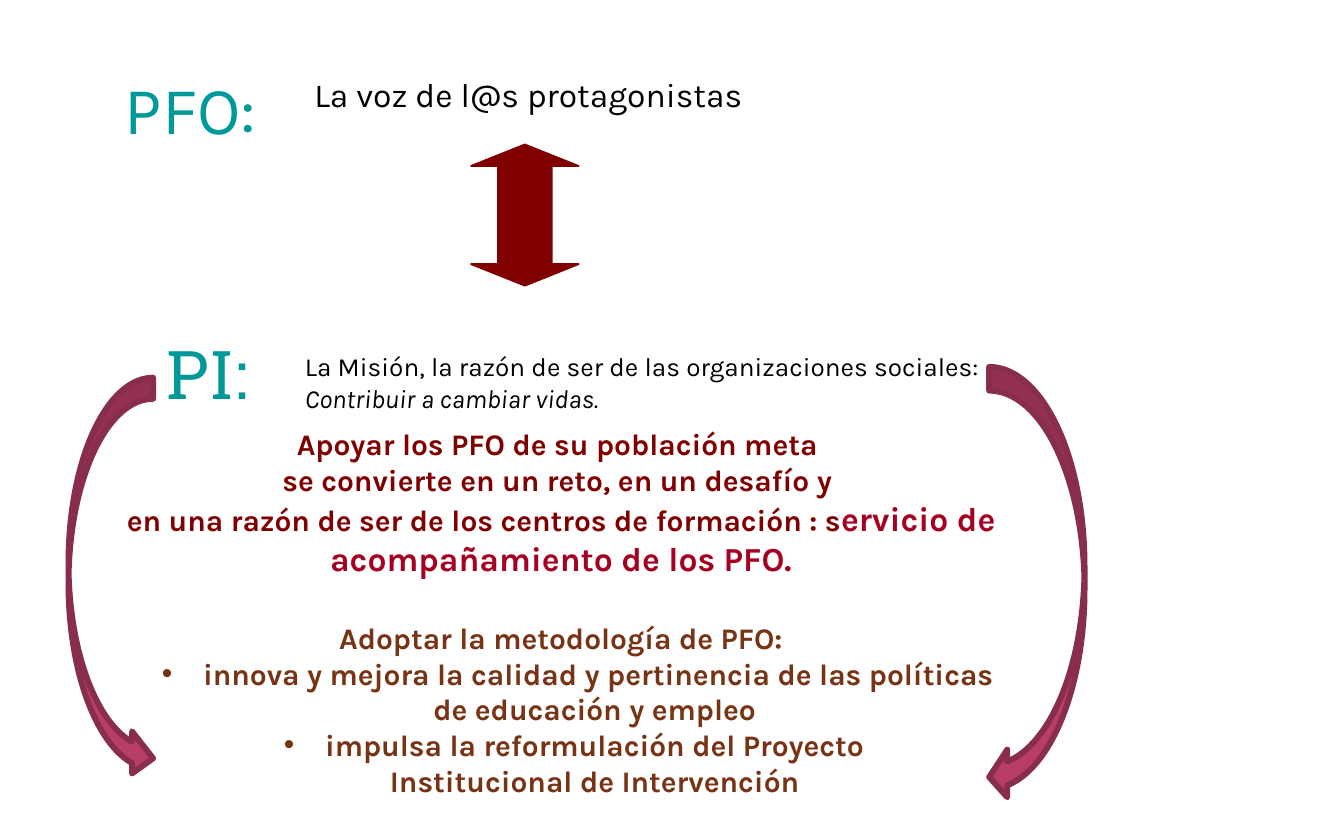
from lxml import etree
from pptx import Presentation
from pptx.dml.color import RGBColor
from pptx.enum.shapes import MSO_SHAPE as Shape
from pptx.enum.text import MSO_ANCHOR as Anchor, MSO_AUTO_SIZE as AutoSize, PP_ALIGN as Align
from pptx.oxml.ns import qn
from pptx.util import Inches, Pt

COLORS = {
    "teal": "009999", "black": "000000", "maroon": "800000", "red": "A50021",
    "brown": "773313", "plum": "B83D68", "plum_dark": "882D4D",
}


def rgb(name):
    return RGBColor.from_string(COLORS[name])


def place(sp, box):
    sp.left, sp.top, sp.width, sp.height = map(Inches, box)


def style(font, size, color, name="Karla", bold=False, italic=False):
    font.name, font.size = name, Pt(size)
    font.bold, font.italic = bold, italic
    font.color.rgb = rgb(color)


def prepare(tf):
    tf.word_wrap = True
    tf.auto_size = AutoSize.NONE
    tf.vertical_anchor = Anchor.TOP


def add_text(s, box, lines, size, color, name="Karla"):
    sp = s.shapes.add_textbox(*map(Inches, box))
    prepare(sp.text_frame)
    sp.text_frame.text = "\n".join(text for text, _ in lines)
    for p, (_, italic) in zip(sp.text_frame.paragraphs, lines):
        style(p.font, size, color, name, italic=italic)


def fill_title(sp, box, text):
    place(sp, box)
    prepare(sp.text_frame)
    sp.text_frame.text = text
    p = sp.text_frame.paragraphs[0]
    p.alignment = Align.LEFT
    style(p.font, 36, "teal")


def set_indent(p, left=0, bullet=False):
    pPr = p._p.get_or_add_pPr()
    pPr.set("marL", str(Inches(left)))
    pPr.set("indent", str(Inches(-0.25 if bullet else 0)))
    mark = etree.Element(qn("a:buChar" if bullet else "a:buNone"))
    if bullet:
        mark.set("char", "•")
    pPr.insert_element_before(mark, "a:tabLst", "a:defRPr", "a:extLst")


def add_line(tf, runs, left=0, bullet=False, before=0):
    p = tf.paragraphs[0] if not tf.paragraphs[0].runs else tf.add_paragraph()
    p.alignment = Align.CENTER
    p.space_before = Pt(before)
    set_indent(p, left, bullet)
    for text, size, color in runs:
        r = p.add_run()
        r.text = text
        if len(runs) > 1:
            style(r.font, size, color, bold=True)
    if len(runs) == 1:
        style(p.font, size, color, bold=True)


def fill_body(sp, box):
    place(sp, box)
    tf = sp.text_frame
    prepare(tf)
    add_line(tf, [("Apoyar los PFO de su población meta ", 16, "maroon")])
    add_line(tf, [("se convierte en un reto, en un desafío y ", 16, "maroon")])
    add_line(tf, [
        ("en una razón de ser de los centros de formación : s", 16, "maroon"),
        ("ervicio de acompañamiento de los PFO.", 18, "red"),
    ])
    add_line(tf, [("Adoptar la metodología de PFO:", 16, "brown")], before=22)
    for text, bullet in (
        (" innova y mejora la calidad y pertinencia de las políticas de educación y empleo", True),
        (" impulsa la reformulación del Proyecto ", True),
        ("Institucional de Intervención", False),
    ):
        add_line(tf, [(text, 16, "brown")], left=0.5, bullet=bullet)


def add_arrow(s, kind, box, fill, line, width, adjustments=(), rotation=0):
    sp = s.shapes.add_shape(kind, *map(Inches, box))
    sp.shadow.inherit = False
    sp.rotation = rotation
    for i, value in enumerate(adjustments):
        sp.adjustments[i] = value
    sp.fill.solid()
    sp.fill.fore_color.rgb = rgb(fill)
    sp.line.color.rgb = rgb(line)
    sp.line.width = Pt(width)


def main():
    prs = Presentation()
    prs.slide_width, prs.slide_height = Inches(10), Inches(6.25)
    s = prs.slides.add_slide(prs.slide_layouts[1])
    fill_title(s.shapes.title, (0.83, 0.45, 1.45, 0.71), "PFO:")
    fill_body(s.placeholders[1], (0.83, 3.12, 6.69, 3.16))
    add_text(s, (1.14, 2.42, 0.85, 0.71), [("PI:", False)], 36, "teal", "Roboto Slab")
    add_text(s, (2.24, 0.5, 3.94, 0.4), [("La voz de l@s protagonistas", False)], 18, "black")
    add_text(s, (2.17, 2.56, 5.57, 0.57), [
        ("La Misión, la razón de ser de las organizaciones sociales:", False),
        ("Contribuir a cambiar vidas.", True),
    ], 14, "black")
    add_arrow(s, Shape.LEFT_RIGHT_ARROW, (3.38, 1.2, 1.05, 0.8),
              "maroon", "maroon", 1, (0.5, 0.2), 90)
    add_arrow(s, Shape.CURVED_RIGHT_ARROW, (0.51, 2.81, 0.63, 2.99), "plum", "plum_dark", 3.15)
    add_arrow(s, Shape.CURVED_LEFT_ARROW, (7.36, 2.73, 0.71, 3.23),
              "plum", "plum_dark", 3.15, (0.25, 0.5, 0.19))
    prs.save("out.pptx")


if __name__ == "__main__":
    main()
